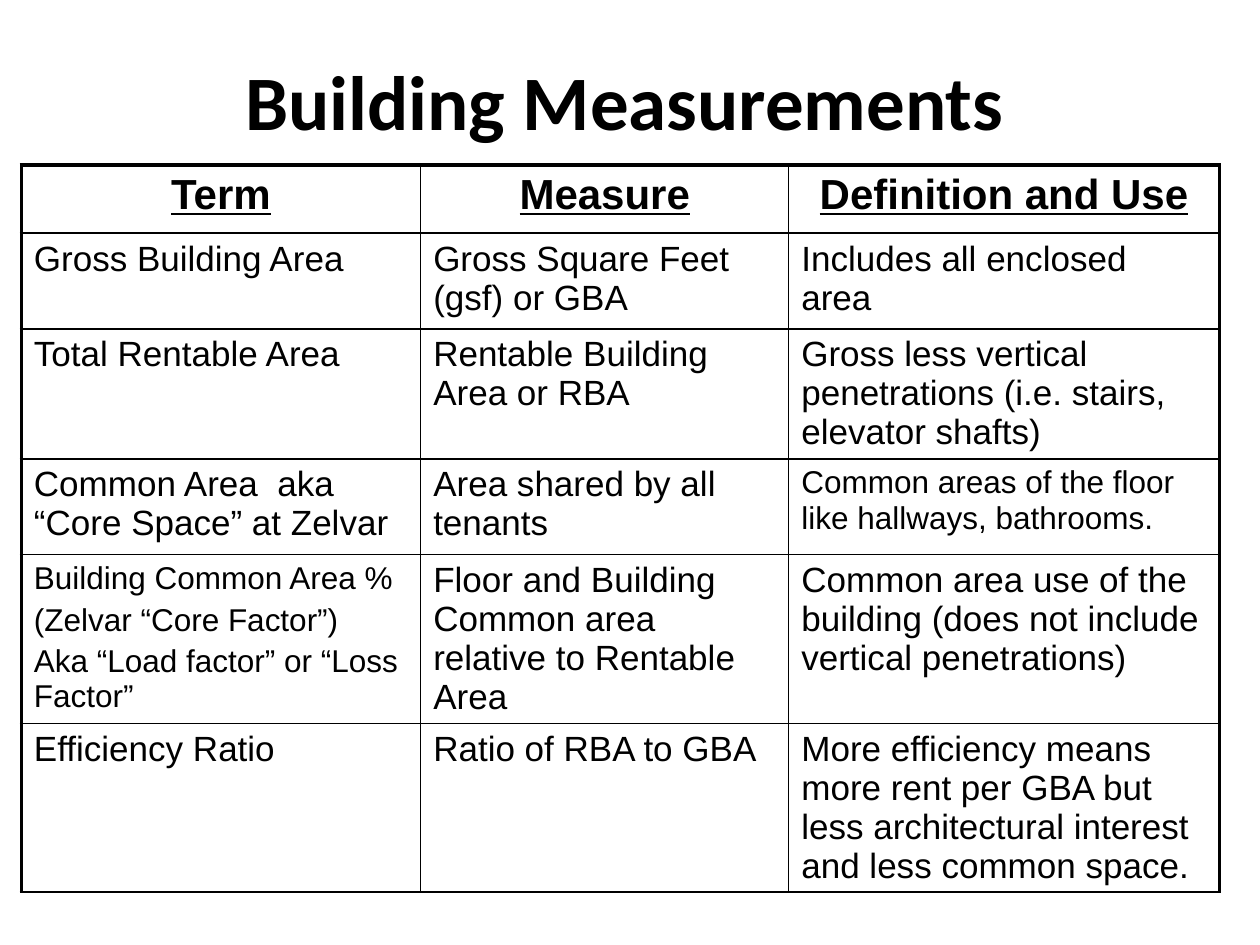
from dataclasses import dataclass

from lxml.etree import SubElement
from pptx import Presentation
from pptx.dml.color import RGBColor
from pptx.enum.text import MSO_ANCHOR, PP_ALIGN
from pptx.oxml.ns import qn
from pptx.util import Cm, Pt

BLACK = "000000"
WHITE = "FFFFFF"
THIN, THICK = 1, 2.25
COLUMN_WIDTHS = [8.05, 7.42, 8.68]


@dataclass
class Entry:
    text: str
    size: float = 20


@dataclass
class Row:
    height: float
    entries: list[Entry]
    header: bool = False


ROWS = [
    Row(1.37, [Entry("Term", 24), Entry("Measure", 24), Entry("Definition and Use", 24)], header=True),
    Row(1.93, [
        Entry("Gross Building Area"),
        Entry("Gross Square Feet (gsf) or GBA"),
        Entry("Includes all enclosed area"),
    ]),
    Row(2.62, [
        Entry("Total Rentable Area"),
        Entry("Rentable Building Area or RBA"),
        Entry("Gross less vertical penetrations (i.e. stairs, elevator shafts)"),
    ]),
    Row(1.93, [
        Entry("Common Area  aka “Core Space” at Zelvar"),
        Entry("Area shared by all tenants"),
        Entry("Common areas of the floor like hallways, bathrooms.", 18),
    ]),
    Row(3.4, [
        Entry("Building Common Area %\n(Zelvar “Core Factor”)\nAka “Load factor” or “Loss Factor”", 18),
        Entry("Floor and Building Common area relative to Rentable Area"),
        Entry("Common area use of the building (does not include vertical penetrations)"),
    ]),
    Row(3.4, [
        Entry("Efficiency Ratio"),
        Entry("Ratio of RBA to GBA"),
        Entry("More efficiency means more rent per GBA but less architectural interest and less common space."),
    ]),
]


def rgb(value: str) -> RGBColor:
    return RGBColor.from_string(value)


def write(tf, text: str, *, size: float, font: str = "Arial", color: str = BLACK,
          bold: bool = False, underline: bool = False,
          align=PP_ALIGN.LEFT, before: float = 0) -> None:
    for i, line in enumerate(text.split("\n")):
        p = tf.add_paragraph() if i else tf.paragraphs[0]
        p.alignment = align
        p.space_before = Pt(before)
        r = p.add_run()
        r.text = line
        r.font.name = font
        r.font.size = Pt(size)
        r.font.bold = bold
        r.font.underline = underline
        r.font.color.rgb = rgb(color)


def set_borders(cell, widths: dict[str, float], color: str = BLACK) -> None:
    tc_pr = cell._tc.get_or_add_tcPr()
    for side, width in widths.items():
        ln = SubElement(tc_pr, qn(f"a:ln{side}"), w=str(Pt(width)))
        fill = SubElement(ln, qn("a:solidFill"))
        SubElement(fill, qn("a:srgbClr"), val=color)


def add_title(s, text: str) -> None:
    sp = s.shapes.title
    sp.left, sp.top, sp.width, sp.height = Cm(0.85), Cm(0.42), Cm(23.5), Cm(3.18)
    tf = sp.text_frame
    tf.vertical_anchor = MSO_ANCHOR.MIDDLE
    write(tf, text, size=44, font="Calibri", bold=True, align=PP_ALIGN.CENTER)


def add_measurements(s, rows: list[Row]) -> None:
    last = len(COLUMN_WIDTHS) - 1
    table = s.shapes.add_table(
        len(rows), len(COLUMN_WIDTHS), Cm(0.43), Cm(3.33),
        Cm(sum(COLUMN_WIDTHS)), Cm(sum(row.height for row in rows))).table
    table.first_row = table.horz_banding = False
    for column, width in zip(table.columns, COLUMN_WIDTHS):
        column.width = Cm(width)
    for i, row in enumerate(rows):
        table.rows[i].height = Cm(row.height)
        for j, entry in enumerate(row.entries):
            cell = table.cell(i, j)
            set_borders(cell, {
                "L": THICK if j == 0 else THIN,
                "R": THICK if j == last else THIN,
                "T": THICK if i == 0 else THIN,
                "B": THIN,
            })
            cell.fill.background()
            write(cell.text_frame, entry.text, size=entry.size,
                  bold=row.header, underline=row.header,
                  align=PP_ALIGN.CENTER if row.header else PP_ALIGN.LEFT,
                  before=entry.size * 0.2)


def main() -> None:
    prs = Presentation()
    prs.slide_width, prs.slide_height = Cm(25.4), Cm(19.05)
    s = prs.slides.add_slide(prs.slide_layouts[5])
    s.background.fill.solid()
    s.background.fill.fore_color.rgb = rgb(WHITE)
    add_title(s, "Building Measurements")
    add_measurements(s, ROWS)
    prs.save("out.pptx")


if __name__ == "__main__":
    main()
